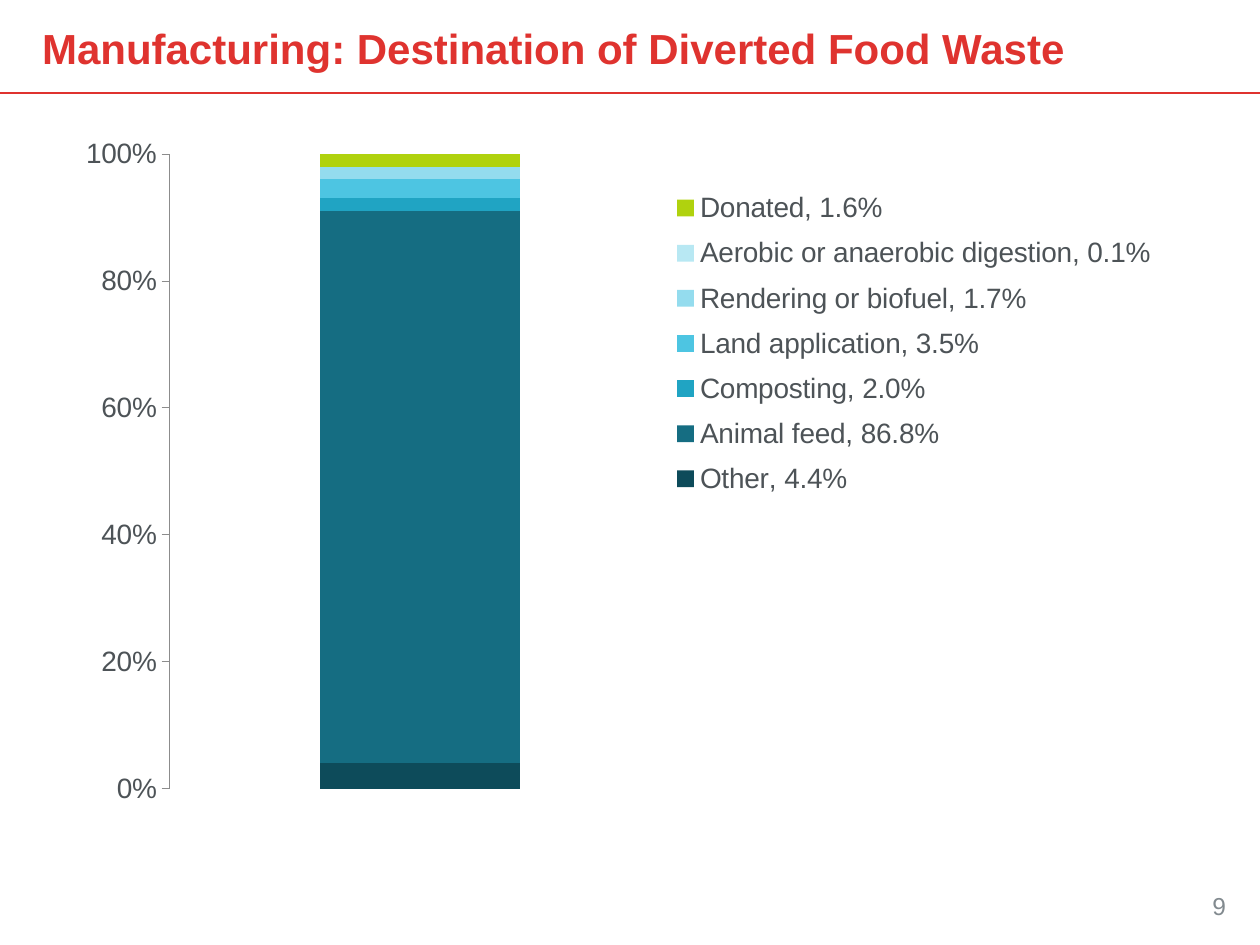
import lxml.etree
import pptx
import pptx.chart.data
import pptx.dml.color
import pptx.enum.chart
import pptx.enum.shapes
import pptx.enum.text
import pptx.oxml.ns
import pptx.util

EMU_PER_PX = 914400 / 126
DESTINATIONS = [
    ("Other, 4.4%", 4, "0D4B5A"),
    ("Animal feed, 86.8%", 87, "156D82"),
    ("Composting, 2.0%", 2, "20A4C3"),
    ("Land application, 3.5%", 3, "4DC5E2"),
    ("Rendering or biofuel, 1.7%", 2, "94DCEE"),
    ("Aerobic or anaerobic digestion, 0.1%", 0, "B8E8F3"),
    ("Donated, 1.6%", 2, "B0D20E"),
]


def px(length):
    return pptx.util.Emu(round(length * EMU_PER_PX))


def color(value):
    return pptx.dml.color.RGBColor.from_string(value)


def format_font(font, size, fill, bold=False):
    font.name = SlideBuilder.font_name
    font.size = pptx.util.Pt(size)
    font.bold = bold
    font.color.rgb = color(fill)


def write_text(shape, text, size, fill, bold=False, align="LEFT", anchor="TOP"):
    frame = shape.text_frame
    frame.word_wrap = True
    frame.auto_size = pptx.enum.text.MSO_AUTO_SIZE.NONE
    frame.margin_left = frame.margin_right = frame.margin_top = frame.margin_bottom = 0
    frame.vertical_anchor = getattr(pptx.enum.text.MSO_ANCHOR, anchor)
    paragraph = frame.paragraphs[0]
    paragraph.alignment = getattr(pptx.enum.text.PP_ALIGN, align)
    run = paragraph.add_run()
    run.text = text
    format_font(run.font, size, fill, bold)


def set_layout(parent, index, frame, box, inner=False):
    qn = pptx.oxml.ns.qn
    for old_layout in parent.findall(qn("c:layout")):
        parent.remove(old_layout)
    layout = lxml.etree.Element(qn("c:layout"))
    manual = lxml.etree.SubElement(layout, qn("c:manualLayout"))
    left, top, width, height = box
    frame_left, frame_top, frame_width, frame_height = frame
    settings = [("layoutTarget", "inner")] if inner else []
    settings += [("xMode", "edge"), ("yMode", "edge")]
    settings += [
        ("x", (left - frame_left) / frame_width),
        ("y", (top - frame_top) / frame_height),
        ("w", width / frame_width),
        ("h", height / frame_height),
    ]
    for name, value in settings:
        lxml.etree.SubElement(manual, qn(f"c:{name}")).set("val", str(value))
    parent.insert(index, layout)


class SlideBuilder:
    font_name = "Arial"
    accent = "DF332F"
    body = "4D5357"
    muted = "828A8F"
    axis = "8C8C8C"

    def __init__(self, presentation):
        self.slide = presentation.slides.add_slide(presentation.slide_layouts[5])

    def title(self, text, box):
        title = self.slide.shapes.title
        title.left, title.top, title.width, title.height = map(px, box)
        write_text(title, text, 24, self.accent, bold=True, anchor="MIDDLE")

    def rule(self, left, right, top):
        line = self.slide.shapes.add_connector(
            pptx.enum.shapes.MSO_CONNECTOR.STRAIGHT, px(left), px(top), px(right), px(top)
        )
        line.line.color.rgb = color(self.accent)
        line.line.width = pptx.util.Pt(1.5)
        properties = line.element.find(pptx.oxml.ns.qn("p:spPr"))
        lxml.etree.SubElement(properties, pptx.oxml.ns.qn("a:effectLst"))

    def page_number(self, text, box):
        shape = self.slide.shapes.add_textbox(*map(px, box))
        write_text(shape, text, 14, self.muted, align="RIGHT")

    def stacked_chart(self, items, frame, plot_box, legend_box):
        data = pptx.chart.data.CategoryChartData(number_format="0")
        data.categories = ["1"]
        for name, value, _ in items:
            data.add_series(name, [value])
        chart = self.slide.shapes.add_chart(
            pptx.enum.chart.XL_CHART_TYPE.COLUMN_STACKED_100, *map(px, frame), data
        ).chart
        chart.has_title = False
        format_font(chart.font, 10, self.body)
        plot = chart.plots[0]
        plot.gap_width = 150
        plot.overlap = 100
        plot.vary_by_categories = False
        for series, (_, _, fill) in zip(plot.series, items):
            series.format.fill.solid()
            series.format.fill.fore_color.rgb = color(fill)
        chart.category_axis.visible = False
        self.value_axis(chart.value_axis)
        chart.has_legend = True
        chart.legend.position = pptx.enum.chart.XL_LEGEND_POSITION.RIGHT
        chart.legend.include_in_layout = False
        format_font(chart.legend.font, 16, self.body)
        plot_area = chart.element.find(".//" + pptx.oxml.ns.qn("c:plotArea"))
        legend = chart.element.find(".//" + pptx.oxml.ns.qn("c:legend"))
        set_layout(plot_area, 0, frame, plot_box, inner=True)
        set_layout(legend, 1, frame, legend_box)

    def value_axis(self, axis):
        axis.minimum_scale = 0
        axis.maximum_scale = 1
        axis.major_unit = 0.2
        axis.has_major_gridlines = False
        axis.major_tick_mark = pptx.enum.chart.XL_TICK_MARK.OUTSIDE
        axis.format.line.color.rgb = color(self.axis)
        axis.format.line.width = pptx.util.Pt(0.5)
        axis.tick_labels.number_format = "0%"
        axis.tick_labels.number_format_is_linked = False
        format_font(axis.tick_labels.font, 16, self.body)


def main():
    presentation = pptx.Presentation()
    presentation.slide_width = px(1260)
    presentation.slide_height = px(945)
    builder = SlideBuilder(presentation)
    builder.rule(0, 1260, 93)
    builder.title("Manufacturing: Destination of Diverted Food Waste", (42, 0, 1173, 95))
    builder.page_number("9", (932, 891, 294, 42))
    builder.stacked_chart(
        DESTINATIONS,
        frame=(63, 125, 1134, 693),
        plot_box=(169, 154, 502, 635),
        legend_box=(664, 178, 500, 331),
    )
    presentation.save("out.pptx")


if __name__ == "__main__":
    main()
